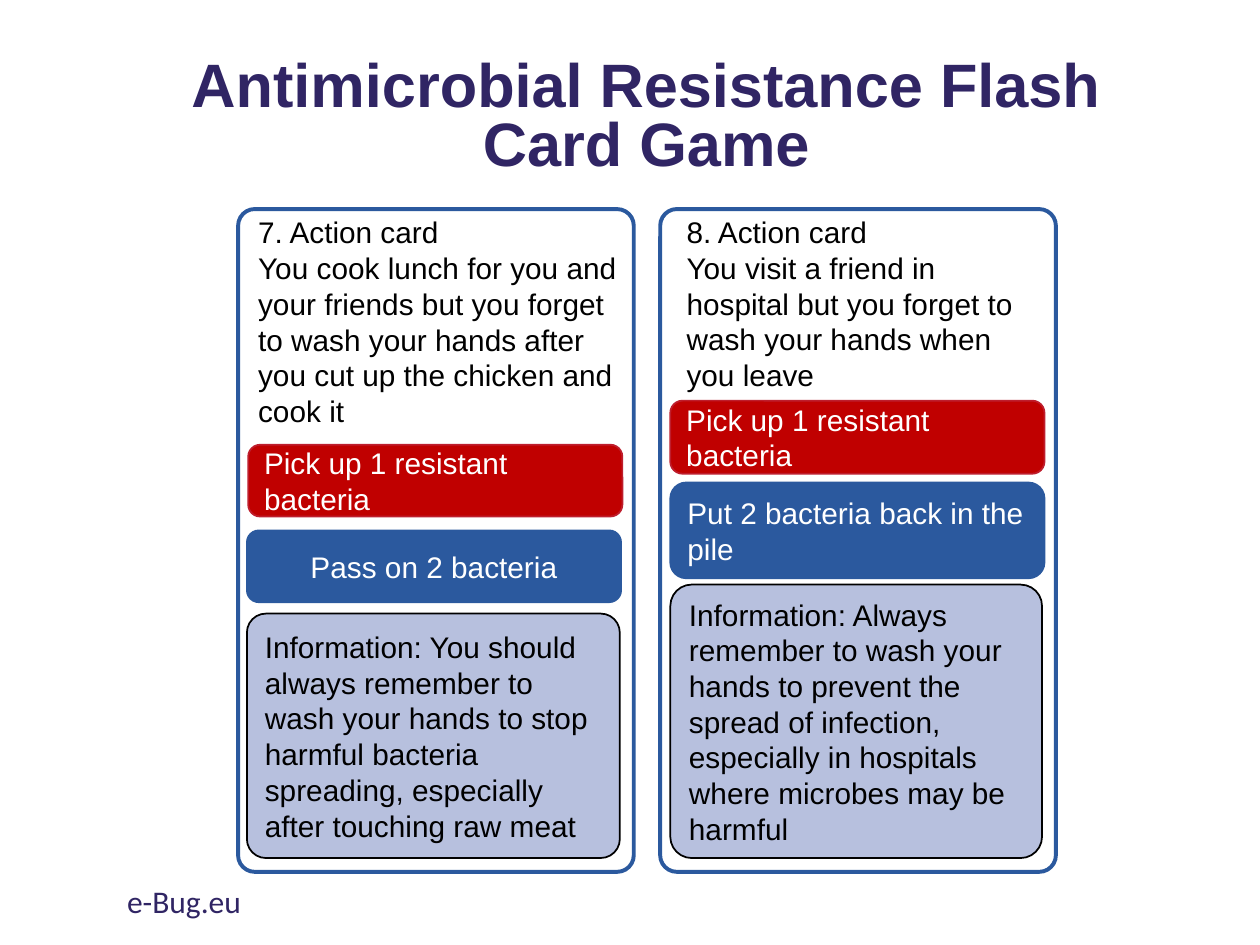
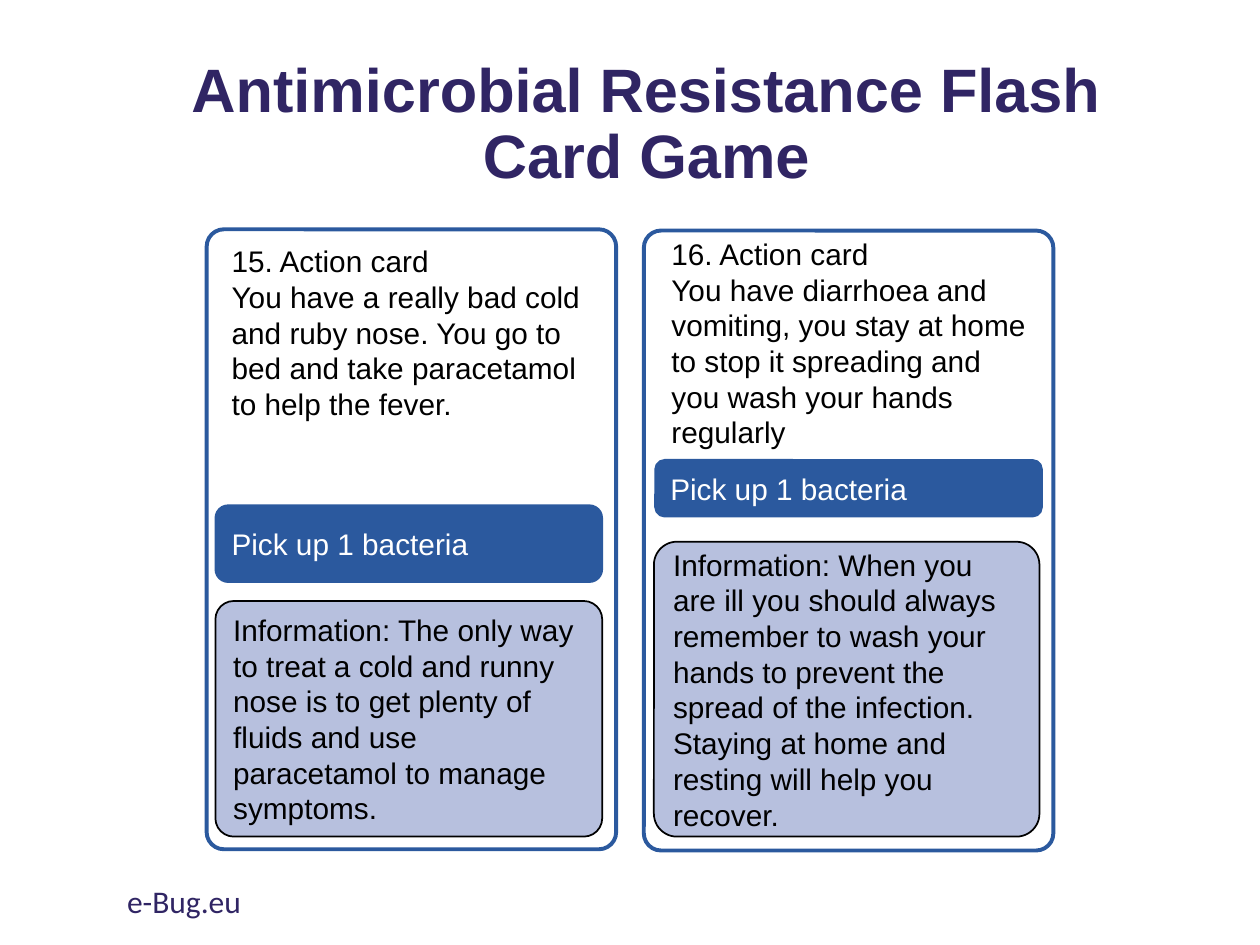
from dataclasses import dataclass

from pptx import Presentation
from pptx.dml.color import RGBColor
from pptx.enum.shapes import MSO_SHAPE as Shape
from pptx.enum.text import MSO_ANCHOR as Anchor, PP_ALIGN as Align
from pptx.util import Inches, Pt


@dataclass(frozen=True)
class Theme:
    heading: str = "302564"
    blue: str = "2B599E"
    red: str = "C00000"
    red_edge: str = "BE1E2D"
    pale: str = "B7C0DE"
    black: str = "000000"
    white: str = "FFFFFF"
    font: str = "Arial"
    footer_font: str = "Calibri"
    title_size: int = 35
    body_size: int = 17
    footer_size: int = 18
    card_line: float = 2.25
    thin_line: float = 1
    card_corner: float = 0.042
    info_corner: float = 0.078


THEME = Theme()
TITLE = "Antimicrobial Resistance Flash Card Game"
FOOTER = "e-Bug.eu"


def write(shape, text, *, color, size=THEME.body_size, font=THEME.font, bold=False,
          align=Align.LEFT, anchor=Anchor.MIDDLE, spacing=None):
    """Fill a shape with text, one paragraph for each line."""
    frame = shape.text_frame
    frame.word_wrap = True
    frame.vertical_anchor = anchor
    for index, line in enumerate(text.split("\n")):
        para = frame.add_paragraph() if index else frame.paragraphs[0]
        para.alignment = align
        if spacing:
            para.line_spacing = spacing
        span = para.add_run()
        span.text = line
        span.font.name = font
        span.font.size = Pt(size)
        span.font.bold = bold
        span.font.color.rgb = RGBColor.from_string(color)


class CardDeck:
    def __init__(self, theme):
        self.theme = theme
        self.deck = Presentation()
        self.deck.slide_width = Inches(10)
        self.deck.slide_height = Inches(7.5)
        self.page = None

    def add_page(self, title_height, title_spacing):
        theme = self.theme
        self.page = self.deck.slides.add_slide(self.deck.slide_layouts[6])
        self.label((0.82, 0.38, 8.62, title_height), TITLE, color=theme.heading,
                   size=theme.title_size, bold=True, align=Align.CENTER,
                   spacing=title_spacing)
        self.label((0.91, 6.95, 3.38, 0.4), FOOTER, color=theme.heading,
                   size=theme.footer_size, font=theme.footer_font, anchor=Anchor.TOP)

    def label(self, place, text, **style):
        box = self.page.shapes.add_textbox(*map(Inches, place))
        write(box, text, **style)

    def panel(self, place, *, line, width=THEME.thin_line, fill=None, corner=None):
        """Add a rounded rectangle; without a corner it keeps the preset radius."""
        panel = self.page.shapes.add_shape(Shape.ROUNDED_RECTANGLE, *map(Inches, place))
        panel.shadow.inherit = False
        if corner is not None:
            panel.adjustments[0] = corner
        if fill:
            panel.fill.solid()
            panel.fill.fore_color.rgb = RGBColor.from_string(fill)
        else:
            panel.fill.background()
        panel.line.color.rgb = RGBColor.from_string(line)
        panel.line.width = Pt(width)
        return panel

    def card(self, place, story_place, story):
        theme = self.theme
        self.panel(place, line=theme.blue, width=theme.card_line, corner=theme.card_corner)
        self.label(story_place, story, color=theme.black, anchor=Anchor.TOP)

    def action(self, place, text, *, fill=THEME.blue, line=THEME.blue, align=Align.LEFT):
        strip = self.panel(place, line=line, fill=fill)
        write(strip, text, color=self.theme.white, align=align)

    def warning(self, place, text):
        self.action(place, text, fill=self.theme.red, line=self.theme.red_edge)

    def information(self, place, text):
        theme = self.theme
        panel = self.panel(place, line=theme.black, fill=theme.pale, corner=theme.info_corner)
        write(panel, "Information: " + text, color=theme.black)


def add_cards_7_and_8(cards):
    cards.add_page(title_height=1.14, title_spacing=0.8)

    cards.card((1.89, 1.66, 3.14, 5.26), (1.95, 1.65, 3.12, 1.81),
               "7. Action card\nYou cook lunch for you and your friends but you forget "
               "to wash your hands after you cut up the chicken and cook it")
    cards.warning((1.97, 3.53, 2.97, 0.57), "Pick up 1 resistant bacteria")
    cards.action((1.96, 4.21, 2.97, 0.57), "Pass on 2 bacteria", align=Align.CENTER)
    cards.information((1.96, 4.87, 2.96, 1.94),
                      "You should always remember to wash your hands to stop harmful "
                      "bacteria spreading, especially after touching raw meat")

    cards.card((5.24, 1.66, 3.14, 5.26), (5.35, 1.65, 2.92, 1.53),
               "8. Action card\nYou visit a friend in hospital but you forget to wash "
               "your hands when you leave")
    cards.warning((5.32, 3.18, 2.97, 0.58), "Pick up 1 resistant bacteria")
    cards.action((5.32, 3.83, 2.97, 0.76), "Put 2 bacteria back in the pile")
    cards.information((5.32, 4.64, 2.95, 2.17),
                      "Always remember to wash your hands to prevent the spread of "
                      "infection, especially in hospitals where microbes may be harmful")


def add_cards_15_and_16(cards):
    cards.add_page(title_height=1.24, title_spacing=0.9)

    cards.card((1.64, 1.82, 3.25, 4.92), (1.74, 1.88, 3.06, 1.53),
               "15. Action card\nYou have a really bad cold and ruby nose. You go to bed "
               "and take paracetamol to help the fever.")
    cards.action((1.71, 4.01, 3.07, 0.61), "Pick up 1 bacteria")
    cards.information((1.71, 4.77, 3.07, 1.87),
                      "The only way to treat a cold and runny nose is to get plenty of "
                      "fluids and use paracetamol to manage symptoms.")

    cards.card((5.11, 1.83, 3.25, 4.92), (5.23, 1.82, 3.02, 1.82),
               "16. Action card\nYou have diarrhoea and vomiting, you stay at home to "
               "stop it spreading and you wash your hands regularly")
    cards.action((5.2, 3.65, 3.07, 0.45), "Pick up 1 bacteria")
    cards.information((5.19, 4.3, 3.06, 2.34),
                      "When you are ill you should always remember to wash your hands to "
                      "prevent the spread of the infection. Staying at home and resting "
                      "will help you recover.")


def main():
    cards = CardDeck(THEME)
    add_cards_7_and_8(cards)
    add_cards_15_and_16(cards)
    cards.deck.save("out.pptx")


if __name__ == "__main__":
    main()
